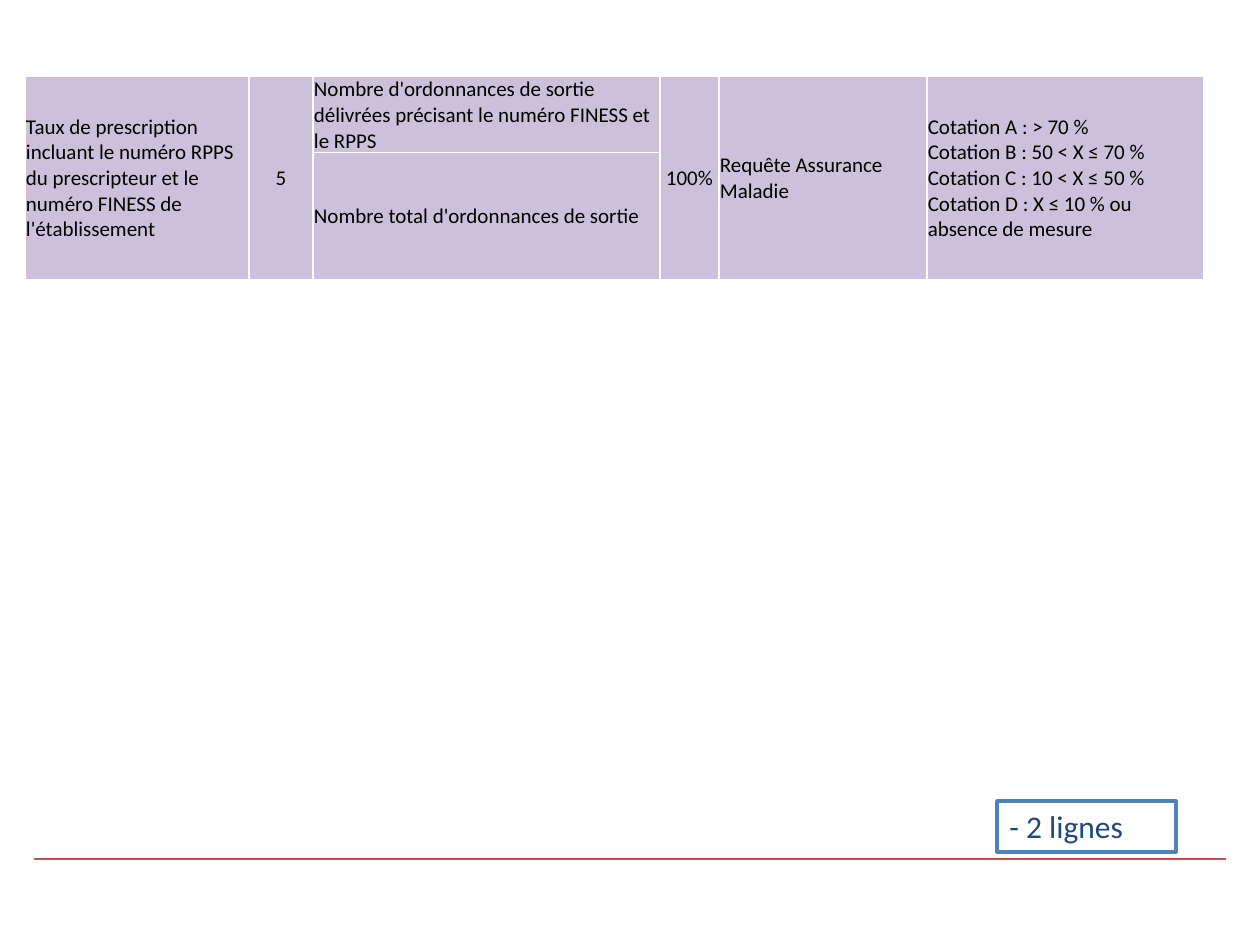
from lxml.etree import SubElement
from pptx import Presentation
from pptx.dml.color import RGBColor
from pptx.enum.shapes import MSO_CONNECTOR, MSO_SHAPE
from pptx.enum.text import MSO_ANCHOR, MSO_AUTO_SIZE, PP_ALIGN
from pptx.oxml.ns import qn
from pptx.util import Emu, Pt

SCALE = 914400 // 126
FONT = "Calibri"
WHITE = RGBColor(0xFF, 0xFF, 0xFF)
BLACK = RGBColor(0, 0, 0)
LILAC = RGBColor(0xCC, 0xC1, 0xDA)
BLUE = RGBColor(0x4F, 0x81, 0xBD)
NAVY = RGBColor(0x1F, 0x49, 0x7D)
RED = RGBColor(0xC0, 0x50, 0x4D)

COLS = [224, 64, 347, 59, 208, 277]
ROWS = [28, 37]
SPLIT = 2
CENTER = {1, 3}
TOP = [
    "Taux de prescription incluant le numéro RPPS du prescripteur et le numéro FINESS de l'établissement",
    "5",
    "Nombre d'ordonnances de sortie délivrées précisant le numéro FINESS et le RPPS",
    "100%",
    "Requête Assurance Maladie",
    "Cotation A : > 70 %\nCotation B : 50 < X ≤ 70 %\nCotation C : 10 < X ≤ 50 %\n"
    "Cotation D : X ≤ 10 % ou absence de mesure",
]
TOTAL = "Nombre total d'ordonnances de sortie"


def px(n):
    return Emu(n * SCALE)


def write(para, text, size, color):
    para.text = text
    font = para.font
    font.name = FONT
    font.size = Pt(size)
    font.color.rgb = color


def border(cell):
    props = cell._tc.get_or_add_tcPr()
    for i, side in enumerate(("lnL", "lnR", "lnT", "lnB")):
        line = props.makeelement(qn("a:" + side), {"w": str(Pt(1))})
        fill = SubElement(line, qn("a:solidFill"))
        SubElement(fill, qn("a:srgbClr"), val=str(WHITE))
        props.insert(i, line)


def style(cell):
    cell.fill.solid()
    cell.fill.fore_color.rgb = LILAC
    cell.vertical_anchor = MSO_ANCHOR.MIDDLE
    cell.margin_left = cell.margin_right = cell.margin_top = px(1)
    cell.margin_bottom = 0
    border(cell)


def grid(slide, x, y, w, h):
    frame = slide.shapes.add_table(len(ROWS), len(COLS), px(x), px(y), px(w), px(h))
    table = frame.table
    table.first_row = table.horz_banding = False
    for col, wide in zip(table.columns, COLS):
        col.width = px(wide)
    for row, high in zip(table.rows, ROWS):
        row.height = px(high)
    frame.height = px(h)
    for cell in table.iter_cells():
        style(cell)
    for i, text in enumerate(TOP):
        cell = table.cell(0, i)
        para = cell.text_frame.paragraphs[0]
        write(para, text, 12, BLACK)
        if i in CENTER:
            para.alignment = PP_ALIGN.CENTER
        if i != SPLIT:
            cell.merge(table.cell(1, i))
    write(table.cell(1, SPLIT).text_frame.paragraphs[0], TOTAL, 12, BLACK)


def rule(slide, x, y, w):
    line = slide.shapes.add_connector(
        MSO_CONNECTOR.STRAIGHT, px(x), px(y), px(x + w), px(y))
    line.line.color.rgb = RED
    line.line.width = Pt(1.25)
    SubElement(line._element.spPr, qn("a:effectLst"))


def badge(slide, x, y, w, h):
    box = slide.shapes.add_shape(MSO_SHAPE.RECTANGLE, px(x), px(y), px(w), px(h))
    box.shadow.inherit = False
    box.fill.solid()
    box.fill.fore_color.rgb = WHITE
    box.line.color.rgb = BLUE
    box.line.width = Pt(2)
    frame = box.text_frame
    frame.word_wrap = True
    frame.auto_size = MSO_AUTO_SIZE.SHAPE_TO_FIT_TEXT
    frame.vertical_anchor = MSO_ANCHOR.TOP
    para = frame.paragraphs[0]
    para.alignment = PP_ALIGN.LEFT
    write(para, "- 2 lignes", 18, NAVY)


def main():
    deck = Presentation()
    deck.slide_width, deck.slide_height = px(1260), px(945)
    slide = deck.slides.add_slide(deck.slide_layouts[6])
    rule(slide, 34, 859, 1192)
    badge(slide, 997, 801, 179, 51)
    grid(slide, 25, 76, 1181, 127)
    deck.save("out.pptx")


if __name__ == "__main__":
    main()
